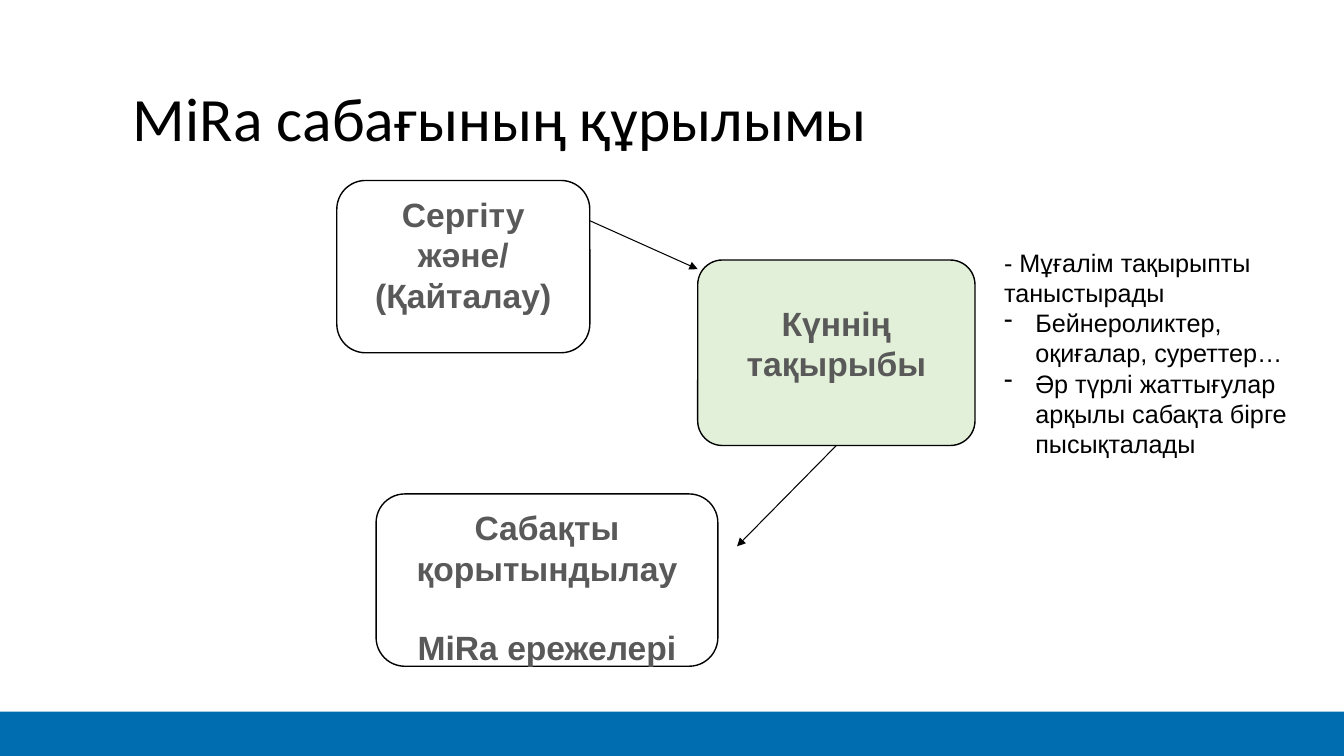
from lxml import etree
from pptx import Presentation
from pptx.dml.color import RGBColor
from pptx.enum.shapes import MSO_CONNECTOR, MSO_SHAPE
from pptx.enum.text import MSO_ANCHOR as ANCHOR, PP_ALIGN as ALIGN
from pptx.oxml.ns import qn
from pptx.util import Inches, Pt


def rgb(value):
    return RGBColor.from_string(value)


def write(tf, texts, look, color):
    tf.word_wrap = True
    for i, text in enumerate(texts):
        p = tf.paragraphs[0] if i == 0 else tf.add_paragraph()
        r = p.add_run()
        r.text = text
        for name, value in look.items():
            setattr(r.font, name, value)
        r.font.color.rgb = rgb(color)


prs = Presentation()
prs.slide_width, prs.slide_height = Inches(13.33), Inches(7.5)
s = prs.slides.add_slide(prs.slide_layouts[6])

band = s.shapes.add_shape(MSO_SHAPE.RECTANGLE, 0, Inches(7.06), prs.slide_width, Inches(0.47))
band.shadow.inherit = False
band.fill.solid()
band.fill.fore_color.rgb = rgb("006DB1")
band.line.fill.background()

title = s.shapes.add_textbox(Inches(1.22), Inches(0.62), Inches(11.1), Inches(1.17))
tf = title.text_frame
tf.vertical_anchor = ANCHOR.MIDDLE
write(tf, ["MiRa сабағының құрылымы"], {"name": "Calibri", "size": Pt(44)}, "000000")
tf.paragraphs[0].line_spacing = 0.9

stages = [
    (3.34, 1.79, 2.51, 1.71, 0.167, "FFFFFF", 0.05, ["Сергіту және/ (Қайталау)"]),
    (6.92, 2.58, 2.75, 1.84, 0.133, "E2F0D9", 0.35, ["Күннің тақырыбы"]),
    (3.73, 4.9, 3.39, 1.71, 0.167, "FFFFFF", 0.05, ["Сабақты қорытындылау", "MiRa ережелері"]),
]
stage_look = {"name": "Arial", "size": Pt(24), "bold": True}
boxes = []
for x, y, w, h, corner, fill, inset, texts in stages:
    sp = s.shapes.add_shape(MSO_SHAPE.ROUNDED_RECTANGLE, Inches(x), Inches(y), Inches(w), Inches(h))
    sp.adjustments[0] = corner
    sp.shadow.inherit = False
    sp.fill.solid()
    sp.fill.fore_color.rgb = rgb(fill)
    sp.line.color.rgb = rgb("000000")
    sp.line.width = Pt(1)
    tf = sp.text_frame
    tf.vertical_anchor = ANCHOR.TOP
    tf.margin_top = Inches(inset)
    write(tf, texts, stage_look, "595959")
    for i, p in enumerate(tf.paragraphs):
        p.alignment = ALIGN.CENTER
        if i:
            p.space_before = Pt(28)
    boxes.append(sp)
warmup, topic, summary = boxes

arrows = []
for x1, y1, x2, y2 in [(5.85, 2.19, 6.92, 2.67), (8.29, 4.42, 7.31, 5.42)]:
    arrow = s.shapes.add_connector(
        MSO_CONNECTOR.STRAIGHT, Inches(x1), Inches(y1), Inches(x2), Inches(y2))
    arrow.line.color.rgb = rgb("000000")
    arrow.line.width = Pt(0.75)
    etree.SubElement(arrow.line._get_or_add_ln(), qn("a:tailEnd"), type="triangle")
    etree.SubElement(arrow._element.spPr, qn("a:effectLst"))
    arrows.append(arrow)
arrows[1].begin_connect(topic, 2)

notes = s.shapes.add_textbox(Inches(9.86), Inches(2.4), Inches(3.15), Inches(2.22))
tf = notes.text_frame
write(tf, [
    "- Мұғалім тақырыпты таныстырады",
    "Бейнероликтер, оқиғалар, суреттер…",
    "Әр түрлі жаттығулар арқылы сабақта бірге пысықталады",
], {"name": "Arial", "size": Pt(18)}, "000000")
for p in tf.paragraphs[1:]:
    pPr = p._p.get_or_add_pPr()
    pPr.set("marL", str(Inches(0.31)))
    pPr.set("indent", str(-Inches(0.31)))
    etree.SubElement(pPr, qn("a:buChar"), char="-")

prs.save("out.pptx")
